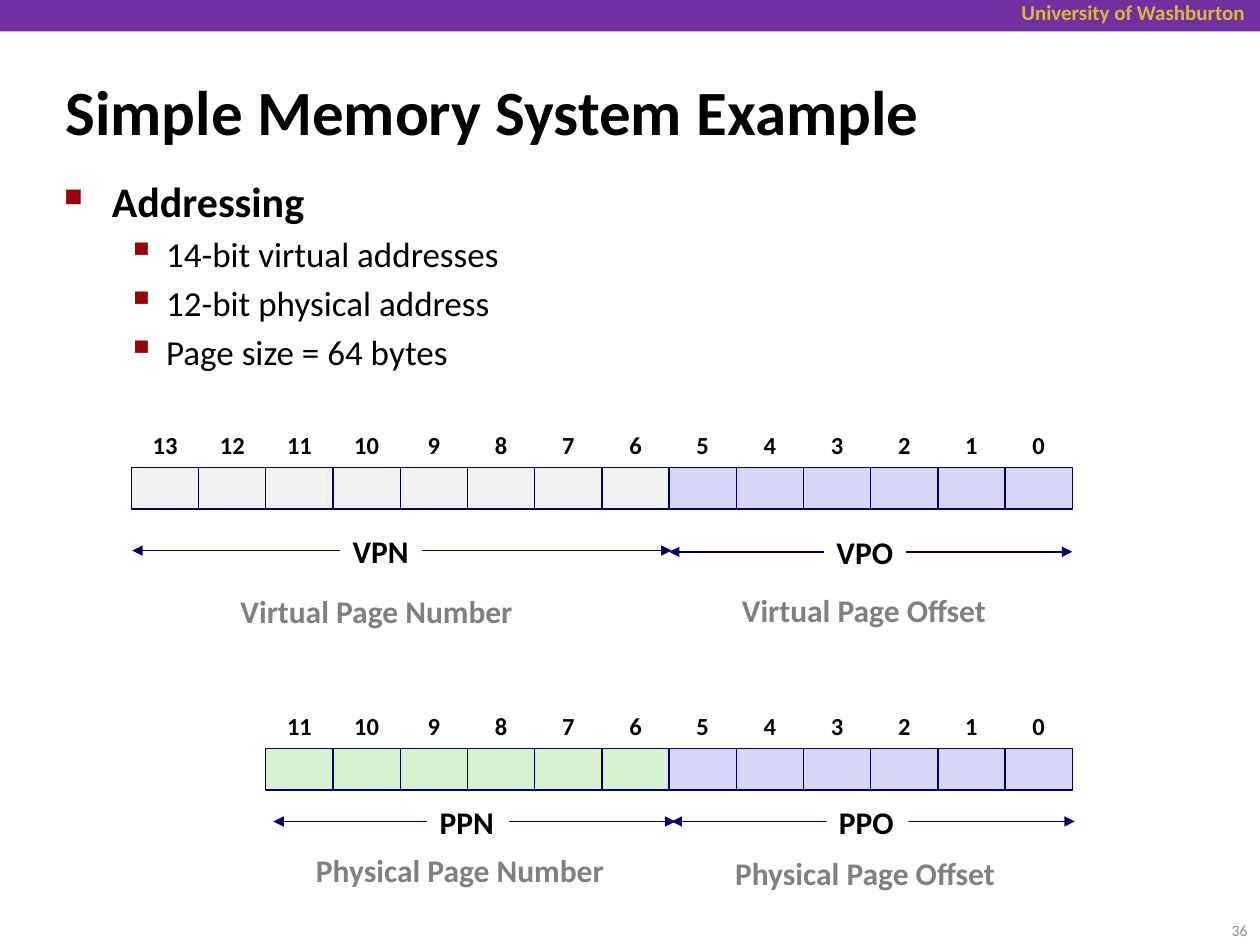
import pptx
import pptx.util
import pptx.dml.color
import pptx.enum.shapes
import pptx.enum.text
import pptx.oxml.ns
import lxml.etree

Inches = pptx.util.Inches
Pt = pptx.util.Pt
ALIGN = pptx.enum.text.PP_ALIGN
ANCHOR = pptx.enum.text.MSO_ANCHOR
AUTO_SIZE = pptx.enum.text.MSO_AUTO_SIZE
SHAPES = pptx.enum.shapes.MSO_SHAPE
CONNECTORS = pptx.enum.shapes.MSO_CONNECTOR

NAVY = "000066"
BULLET_RED = "990000"
GRAY = "808080"
VPN_FILL = "F2F2F2"
PPN_FILL = "D5F1CF"
OFFSET_FILL = "D6D6F5"
BIT_WIDTH = 1.6 / 3
BIT_HEIGHT = 0.33
BITS_RIGHT = 8.51
OFFSET_BITS = 6


def color(value):
    return pptx.dml.color.RGBColor.from_string(value)


def add_child(parent, tag, **attributes):
    return lxml.etree.SubElement(parent, pptx.oxml.ns.qn(tag), **attributes)


def add_run(paragraph, text, size, text_color="000000", bold=True):
    run = paragraph.add_run()
    run.text = text
    run.font.name = "Calibri"
    run.font.size = Pt(size)
    run.font.bold = bold
    run.font.color.rgb = color(text_color)


def add_text(shapes, box, text, size, text_color="000000", bold=True, align=ALIGN.LEFT,
             anchor=ANCHOR.TOP, wrap=False, line_spacing=None, space_before=0):
    shape = shapes.add_textbox(*map(Inches, box))
    frame = shape.text_frame
    frame.word_wrap = wrap
    frame.vertical_anchor = anchor
    paragraph = frame.paragraphs[0]
    paragraph.alignment = align
    paragraph.line_spacing = line_spacing
    paragraph.space_before = Pt(space_before)
    add_run(paragraph, text, size, text_color, bold)
    return shape


def add_label(shapes, box, text, text_color="000000", align=ALIGN.LEFT):
    return add_text(shapes, box, text, 18, text_color, align=align,
                    line_spacing=0.88, space_before=6.8)


def add_rectangle(shapes, box, fill, line=None):
    shape = shapes.add_shape(SHAPES.RECTANGLE, *map(Inches, box))
    shape.shadow.inherit = False
    shape.fill.solid()
    shape.fill.fore_color.rgb = color(fill)
    if line:
        shape.line.color.rgb = color(line)
        shape.line.width = Pt(0.75)
    else:
        shape.line.fill.background()


def add_header(slide):
    add_rectangle(slide.shapes, (0, 0, 10, 0.25), "7030A0")
    add_text(slide.shapes, (7.33, -0.05, 2.65, 0.3), "University of Washburton", 12, "DCB834",
             align=ALIGN.RIGHT, wrap=True)


def set_title(slide, text):
    title = slide.shapes.title
    title.left, title.top, title.width, title.height = map(Inches, (0.42, 0.56, 7.99, 0.63))
    frame = title.text_frame
    frame.auto_size = AUTO_SIZE.NONE
    frame.vertical_anchor = ANCHOR.MIDDLE
    paragraph = frame.paragraphs[0]
    paragraph.alignment = ALIGN.LEFT
    add_run(paragraph, text, 36)


def set_bullet(paragraph, character, percent, margin, indent):
    properties = paragraph._p.get_or_add_pPr()
    properties.set("marL", str(Inches(margin)))
    properties.set("indent", str(Inches(-indent)))
    bullet_color = add_child(properties, "a:buClr")
    add_child(bullet_color, "a:srgbClr", val=BULLET_RED)
    add_child(properties, "a:buSzPct", val=str(percent * 1000))
    add_child(properties, "a:buChar", char=character)


def add_bullets(slide, heading, items):
    shape = slide.shapes.add_textbox(*map(Inches, (0.41, 1.34, 9.09, 1.73)))
    frame = shape.text_frame
    frame.word_wrap = True
    paragraph = frame.paragraphs[0]
    paragraph.space_before = Pt(4.8)
    set_bullet(paragraph, "■", 60, 0.38, 0.38)
    add_run(paragraph, heading, 24)
    for item in items:
        paragraph = frame.add_paragraph()
        paragraph.level = 1
        paragraph.space_before = Pt(4)
        set_bullet(paragraph, "▪", 110, 0.81, 0.31)
        add_run(paragraph, item, 20, bold=False)


def add_address(slide, bit_count, top, page_fill):
    for bit in reversed(range(bit_count)):
        left = BITS_RIGHT - (bit + 1) * BIT_WIDTH
        fill = OFFSET_FILL if bit < OFFSET_BITS else page_fill
        add_rectangle(slide.shapes, (left, top, BIT_WIDTH, BIT_HEIGHT), fill, NAVY)
        add_text(slide.shapes, (left, top - BIT_HEIGHT, BIT_WIDTH, BIT_HEIGHT), str(bit), 14,
                 align=ALIGN.CENTER, anchor=ANCHOR.MIDDLE, line_spacing=0.88, space_before=5.2)


def add_span(slide, text, left, right, middle, label_left):
    shapes = slide.shapes.add_group_shape().shapes
    arrow = shapes.add_connector(CONNECTORS.STRAIGHT, Inches(left), Inches(middle),
                                 Inches(right), Inches(middle))
    arrow.line.color.rgb = color(NAVY)
    arrow.line.width = Pt(0.75)
    line = arrow.line._get_or_add_ln()
    add_child(line, "a:headEnd", type="triangle")
    add_child(line, "a:tailEnd", type="triangle")
    add_child(arrow._element.spPr, "a:effectLst")
    label = add_label(shapes, (label_left, middle - 0.16, 0.65, 0.36), text)
    label.fill.solid()
    label.fill.fore_color.rgb = color("FFFFFF")


def main():
    presentation = pptx.Presentation()
    presentation.slide_width = Inches(10)
    presentation.slide_height = Inches(7.5)
    slide = presentation.slides.add_slide(presentation.slide_layouts[5])
    add_header(slide)
    set_title(slide, "Simple Memory System Example")
    add_bullets(slide, "Addressing", ["14-bit virtual addresses", "12-bit physical address",
                                      "Page size = 64 bytes"])
    add_address(slide, 14, 3.71, VPN_FILL)
    add_address(slide, 12, 5.94, PPN_FILL)
    add_span(slide, "VPO", 5.31, 8.51, 4.38, 6.54)
    add_span(slide, "PPO", 5.33, 8.53, 6.52, 6.56)
    add_span(slide, "PPN", 2.17, 5.36, 6.52, 3.39)
    add_span(slide, "VPN", 1.05, 5.33, 4.37, 2.7)
    add_label(slide.shapes, (1.81, 4.69, 2.38, 0.36), "Virtual Page Number", GRAY)
    add_label(slide.shapes, (5.79, 4.68, 2.16, 0.36), "Virtual Page Offset", GRAY)
    add_label(slide.shapes, (2.41, 6.74, 2.5, 0.36), "Physical Page Number", GRAY)
    add_label(slide.shapes, (5.72, 6.77, 2.29, 0.36), "Physical Page Offset", GRAY, ALIGN.CENTER)
    add_text(slide.shapes, (9.33, 7.18, 0.67, 0.4), "36", 9, "8C8C8C", bold=False,
             align=ALIGN.RIGHT, anchor=ANCHOR.MIDDLE, wrap=True)
    presentation.save("out.pptx")


if __name__ == "__main__":
    main()
